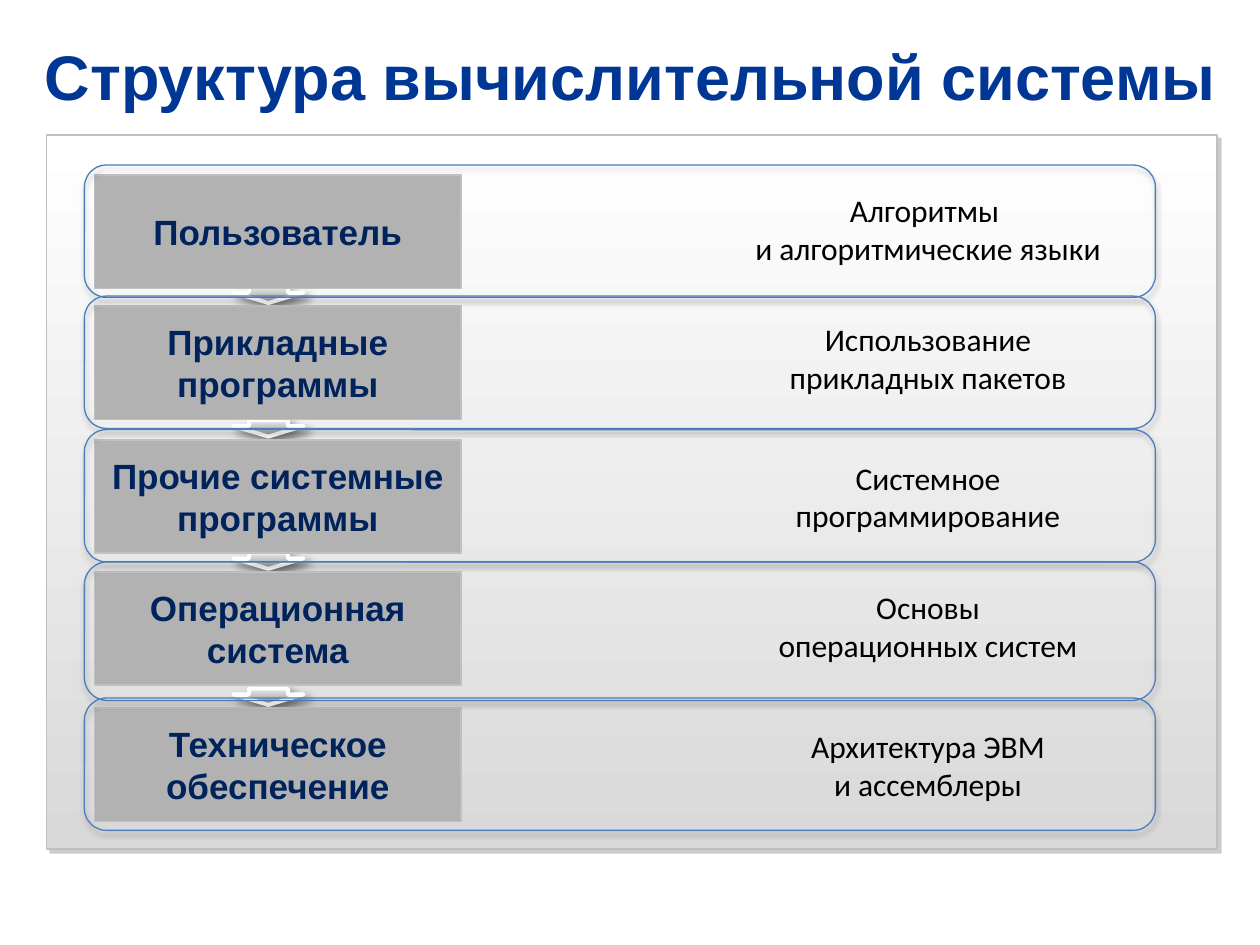
from lxml.etree import SubElement
from pptx import Presentation
from pptx.dml.color import RGBColor
from pptx.enum.shapes import MSO_SHAPE as Shape
from pptx.enum.text import MSO_ANCHOR as Anchor, MSO_AUTO_SIZE as AutoSize, PP_ALIGN as Align
from pptx.oxml.ns import qn
from pptx.util import Inches, Pt

TITLE = "Структура вычислительной системы"
LEVELS = [
    {"name": "Пользователь", "topic": "Алгоритмы \vи алгоритмические языки",
     "top": 1.31, "height": 1.05, "topic_gap": 0.16},
    {"name": "Прикладные программы", "topic": "Использование\vприкладных пакетов",
     "top": 2.35, "height": 1.05, "topic_gap": 0.14},
    {"name": "Прочие системные программы", "topic": "Системное\vпрограммирование",
     "top": 3.41, "height": 1.05, "topic_gap": 0.18},
    {"name": "Операционная система", "topic": "Основы\vоперационных систем",
     "top": 4.46, "height": 1.1, "topic_gap": 0.16},
    {"name": "Техническое обеспечение", "topic": "Архитектура ЭВМ\vи ассемблеры",
     "top": 5.54, "height": 1.05, "topic_gap": 0.18},
]

WHITE = RGBColor(0xFF, 0xFF, 0xFF)
BLACK = RGBColor(0x00, 0x00, 0x00)
TITLE_BLUE = RGBColor(0x00, 0x37, 0x94)
NAVY = RGBColor(0x00, 0x23, 0x5C)
FRAME_BLUE = RGBColor(0x4B, 0x7E, 0xBC)
BOX_GREY = RGBColor(0xB2, 0xB2, 0xB2)
EDGE_GREY = RGBColor(0xC0, 0xC0, 0xC0)
PANEL_GREY = RGBColor(0xD9, 0xD9, 0xD9)
ARROW_LIGHT = RGBColor(0xEA, 0xEA, 0xEA)
ARROW_DARK = RGBColor(0x96, 0x96, 0x96)

TITLE_FONT = {"name": "Arial", "size": Pt(36), "bold": True}
NAME_FONT = {"name": "Arial", "size": Pt(20), "bold": True}
TOPIC_FONT = {"name": "Calibri", "size": Pt(18), "bold": False}
PANEL_SHADOW = {"color": "808080", "alpha": 40, "blur": 0, "dist": 3, "angle": 45}
ARROW_SHADOW = {"color": "000000", "alpha": 50, "blur": 5, "dist": 4.2, "angle": 45}
FRAME_SHADOW = {"color": "000000", "alpha": 35, "blur": 3.1, "dist": 1.8, "angle": 90}

BOX_INSET = 0.08
BOX_HEIGHT = 0.9
ARROW_CENTER = 2.13
ARROW_LENGTH, ARROW_WIDTH = 0.13, 0.56


def write(shape, text, font, color):
    frame = shape.text_frame
    frame.word_wrap = True
    paragraph = frame.paragraphs[0]
    paragraph.text = text
    paragraph.alignment = Align.CENTER
    for run in paragraph.runs:
        for key, value in font.items():
            setattr(run.font, key, value)
        run.font.color.rgb = color
    return frame


def add_shadow(shape, shadow):
    effects = shape._element.spPr.find(qn("a:effectLst"))
    outer = SubElement(effects, qn("a:outerShdw"), {
        "blurRad": str(Pt(shadow["blur"])), "dist": str(Pt(shadow["dist"])),
        "dir": str(shadow["angle"] * 60000), "algn": "ctr", "rotWithShape": "0"})
    color = SubElement(outer, qn("a:srgbClr"), val=shadow["color"])
    SubElement(color, qn("a:alpha"), val=str(shadow["alpha"] * 1000))


def add_figure(slide, kind, place, fill, line, width, shadow=None, angle=0):
    shape = slide.shapes.add_shape(kind, *map(Inches, place))
    shape.shadow.inherit = False
    if fill is None:
        shape.fill.background()
    elif isinstance(fill, list):
        shape.fill.gradient()
        shape.fill.gradient_angle = angle
        for stop, color, position in zip(shape.fill.gradient_stops, fill, (0, 1)):
            stop.color.rgb = color
            stop.position = position
    else:
        shape.fill.solid()
        shape.fill.fore_color.rgb = fill
    shape.line.color.rgb = line
    shape.line.width = Pt(width)
    if shadow:
        add_shadow(shape, shadow)
    return shape


def add_arrow(slide, center):
    place = (ARROW_CENTER - ARROW_LENGTH / 2, center - ARROW_WIDTH / 2,
             ARROW_LENGTH, ARROW_WIDTH)
    arrow = add_figure(slide, Shape.RIGHT_ARROW, place, [ARROW_LIGHT, ARROW_DARK],
                       WHITE, 2.25, ARROW_SHADOW)
    arrow.rotation = 90
    arrow.adjustments[0] = 0.55
    arrow.adjustments[1] = 0.64


def add_box(slide, level):
    place = (0.67 + BOX_INSET, level["top"] + BOX_INSET, 2.91, BOX_HEIGHT)
    box = add_figure(slide, Shape.RECTANGLE, place, BOX_GREY, EDGE_GREY, 1)
    frame = write(box, level["name"], NAME_FONT, NAVY)
    frame.vertical_anchor = Anchor.MIDDLE
    for side in ("left", "top", "right", "bottom"):
        setattr(frame, f"margin_{side}", 0)


def add_topic(slide, level):
    place = (5.79, level["top"] + level["topic_gap"], 3.15, 0.71)
    topic = slide.shapes.add_textbox(*map(Inches, place))
    write(topic, level["topic"], TOPIC_FONT, BLACK).auto_size = AutoSize.SHAPE_TO_FIT_TEXT


def main():
    presentation = Presentation()
    presentation.slide_width, presentation.slide_height = Inches(10), Inches(7.5)
    slide = presentation.slides.add_slide(presentation.slide_layouts[5])

    title = slide.shapes.title
    title.left, title.top, title.width, title.height = map(Inches, (0.2, 0.26, 9.61, 0.68))
    write(title, TITLE, TITLE_FONT, TITLE_BLUE).vertical_anchor = Anchor.MIDDLE

    add_figure(slide, Shape.RECTANGLE, (0.37, 1.07, 9.29, 5.67), [WHITE, PANEL_GREY],
               EDGE_GREY, 1, PANEL_SHADOW, 270)
    for level in LEVELS[1:]:
        add_arrow(slide, level["top"] - 0.01)
    for level in LEVELS:
        add_box(slide, level)
    for level in LEVELS:
        add_figure(slide, Shape.ROUNDED_RECTANGLE, (0.67, level["top"], 8.5, level["height"]),
                   None, FRAME_BLUE, 0.75, FRAME_SHADOW)
        add_topic(slide, level)

    presentation.save("out.pptx")


if __name__ == "__main__":
    main()
